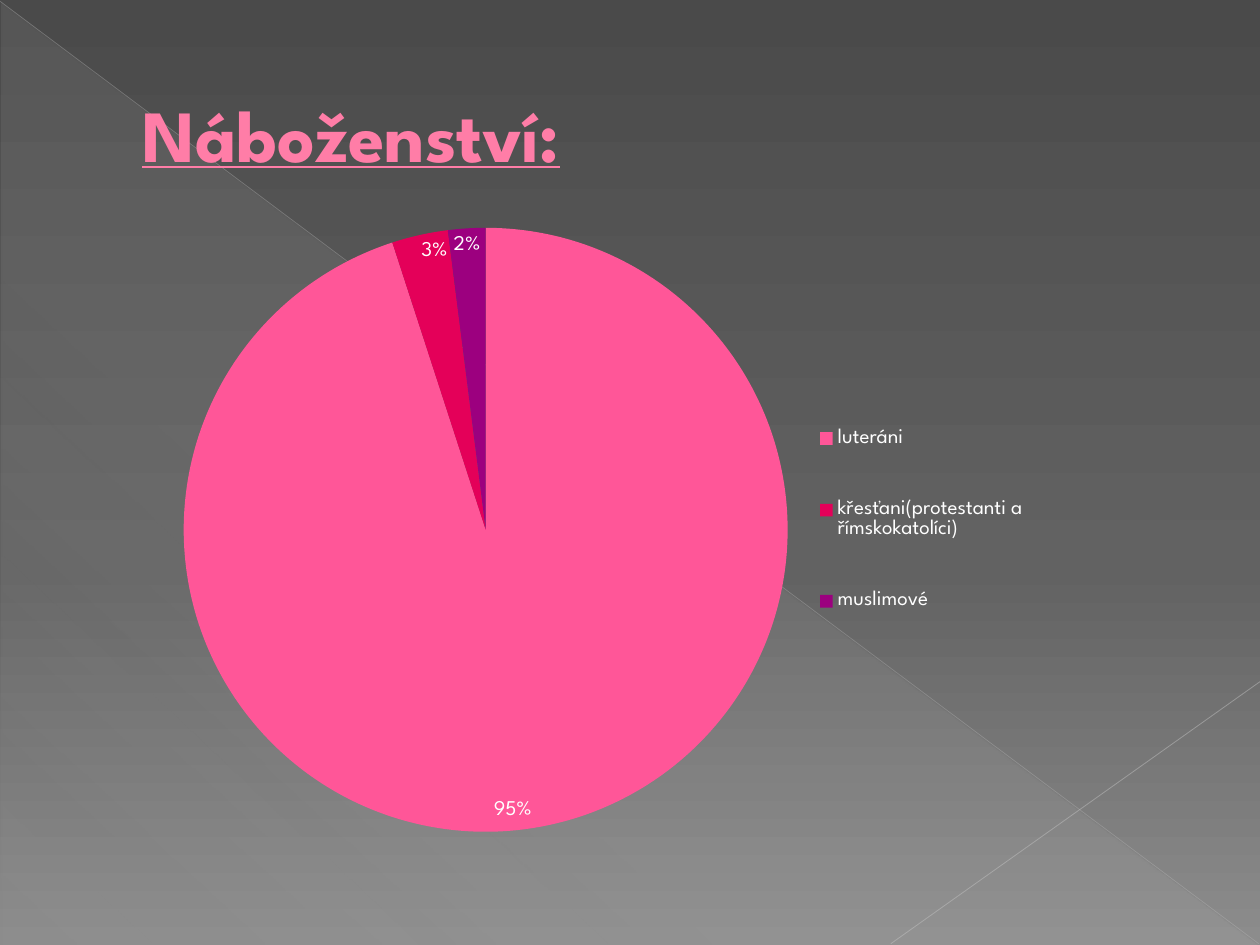
"""Build a slide with a pie chart of religious affiliation."""
from lxml.etree import SubElement
from pptx import Presentation
from pptx.chart.data import CategoryChartData
from pptx.dml.color import RGBColor
from pptx.enum.chart import XL_CHART_TYPE, XL_LABEL_POSITION, XL_LEGEND_POSITION
from pptx.enum.shapes import MSO_CONNECTOR, MSO_SHAPE
from pptx.enum.text import MSO_ANCHOR
from pptx.oxml import parse_xml
from pptx.oxml.ns import nsdecls, qn
from pptx.util import Pt

TITLE = "Náboženství:"
RELIGIONS = [
    ("luteráni", 95, "FF5698"),
    ("křesťani(protestanti a římskokatolíci)", 3, "E40059"),
    ("muslimové", 2, "9C007F"),
]
THEME = {
    "font": "League Spartan",
    "title": "FF7DA7",
    "title_outline": "B12761",
    "text": "FFFFFF",
    "title_size": 42,
    "chart_size": 10,
    "label_size": 12,
    "background": [(0, "4A4A4A", 100), (60, "626262", 100), (100, "8C8C8C", 100)],
    "triangle": [(0, "D2D2D2", 10), (70, "D2D2D2", 8), (100, "D2D2D2", 1)],
}
DIAGONALS = [
    ((0, 0.72, 719.28, 539.28), "BFBFBF", 0.39, 35),
    ((720, 389.52, 509.04, 539.28), "C6C6C6", 0.47, 45),
]
TRIANGLE_BOX = (0.72, 1.44, 718.56, 538.56)
TITLE_BOX = (36, 20.88, 648, 110.16)
TITLE_INDENT = 38.16
CHART_BOX = (82.08, 105.12, 519.84, 380.16)
PIE_LAYOUT = {"x": 0.044, "y": 0.066, "w": 0.664, "h": 0.908}
LEGEND_LAYOUT = {"x": 0.72, "y": 0.29, "w": 0.27, "h": 0.43}


def points(lengths):
    return [Pt(length) for length in lengths]


def format_font(font, size, color, **extra):
    values = {"name": THEME["font"], "size": Pt(size), **extra}
    for name, value in values.items():
        setattr(font, name, value)
    font.color.rgb = RGBColor.from_string(color)


def add_color(parent, color, opacity):
    node = SubElement(parent, qn("a:srgbClr"), val=color)
    if opacity < 100:
        SubElement(node, qn("a:alpha"), val=str(opacity * 1000))


def set_gradient(fill, owner, stops, angle):
    fill.gradient()
    fill.gradient_angle = 360 - angle
    stop_list = owner.find(".//" + qn("a:gsLst"))
    for stop in list(stop_list):
        stop_list.remove(stop)
    for position, color, opacity in stops:
        stop = SubElement(stop_list, qn("a:gs"), pos=str(position * 1000))
        add_color(stop, color, opacity)


def set_layout(element, fractions, inner=False):
    for old in element.findall(qn("c:layout")):
        element.remove(old)
    target = '<c:layoutTarget val="inner"/>' if inner else ""
    modes = "".join(f'<c:{axis}Mode val="edge"/>' for axis in "xy")
    sizes = "".join(f'<c:{name} val="{value}"/>' for name, value in fractions.items())
    layout = parse_xml(
        f'<c:layout {nsdecls("c")}><c:manualLayout>{target}{modes}{sizes}'
        "</c:manualLayout></c:layout>"
    )
    position = element.find(qn("c:legendPos"))
    element.insert(0 if position is None else 1, layout)


def add_backdrop(slide):
    set_gradient(slide.background.fill, slide.element, THEME["background"], 90)
    triangle = slide.shapes.add_shape(MSO_SHAPE.RIGHT_TRIANGLE, *points(TRIANGLE_BOX))
    triangle.shadow.inherit = False
    triangle.line.fill.background()
    set_gradient(triangle.fill, triangle.element, THEME["triangle"], 133)
    for ends, color, width, opacity in DIAGONALS:
        line = slide.shapes.add_connector(MSO_CONNECTOR.STRAIGHT, *points(ends))
        line.line.width = Pt(width)
        line.line.fill.solid()
        line.line.color.rgb = RGBColor.from_string(color)
        node = line.element.spPr.find(".//" + qn("a:srgbClr"))
        SubElement(node, qn("a:alpha"), val=str(opacity * 1000))
        SubElement(line.element.spPr, qn("a:effectLst"))


def add_title(slide):
    frame = slide.shapes.add_textbox(*points(TITLE_BOX)).text_frame
    frame.word_wrap = True
    frame.vertical_anchor = MSO_ANCHOR.MIDDLE
    paragraph = frame.paragraphs[0]
    properties = paragraph._p.get_or_add_pPr()
    properties.set("marL", str(Pt(TITLE_INDENT)))
    properties.set("indent", "0")
    run = paragraph.add_run()
    run.text = TITLE
    format_font(run.font, THEME["title_size"], THEME["title"], bold=True, underline=True)
    outline = parse_xml(f'<a:ln {nsdecls("a")} w="{Pt(0.5)}"><a:solidFill/></a:ln>')
    add_color(outline[0], THEME["title_outline"], 100)
    run._r.get_or_add_rPr().insert(0, outline)


def add_pie(slide):
    names, shares, colors = zip(*RELIGIONS)
    data = CategoryChartData()
    data.categories = names
    data.add_series("Series 1", shares)
    chart = slide.shapes.add_chart(XL_CHART_TYPE.PIE, *points(CHART_BOX), data).chart
    chart.has_title = False
    format_font(chart.font, THEME["chart_size"], THEME["text"])
    plot = chart.plots[0]
    plot.vary_by_categories = True
    for index, color in enumerate(colors):
        wedge = plot.series[0].points[index].format
        wedge.fill.solid()
        wedge.fill.fore_color.rgb = RGBColor.from_string(color)
        wedge.line.fill.background()
    labels = plot.series[0].data_labels
    label_format = {
        "show_percentage": True,
        "show_value": False,
        "number_format": "0%",
        "number_format_is_linked": False,
        "position": XL_LABEL_POSITION.INSIDE_END,
    }
    for name, value in label_format.items():
        setattr(labels, name, value)
    format_font(labels.font, THEME["label_size"], THEME["text"])
    chart.has_legend = True
    legend = chart.legend
    legend.position = XL_LEGEND_POSITION.RIGHT
    legend.include_in_layout = False
    format_font(legend.font, THEME["label_size"], THEME["text"])
    chart_area = chart.element.find(qn("c:chart"))
    set_layout(chart_area.find(qn("c:plotArea")), PIE_LAYOUT, inner=True)
    set_layout(chart_area.find(qn("c:legend")), LEGEND_LAYOUT)


def main():
    presentation = Presentation()
    presentation.slide_width, presentation.slide_height = points((720, 540))
    slide = presentation.slides.add_slide(presentation.slide_layouts[6])
    add_backdrop(slide)
    add_title(slide)
    add_pie(slide)
    presentation.save("out.pptx")


if __name__ == "__main__":
    main()
